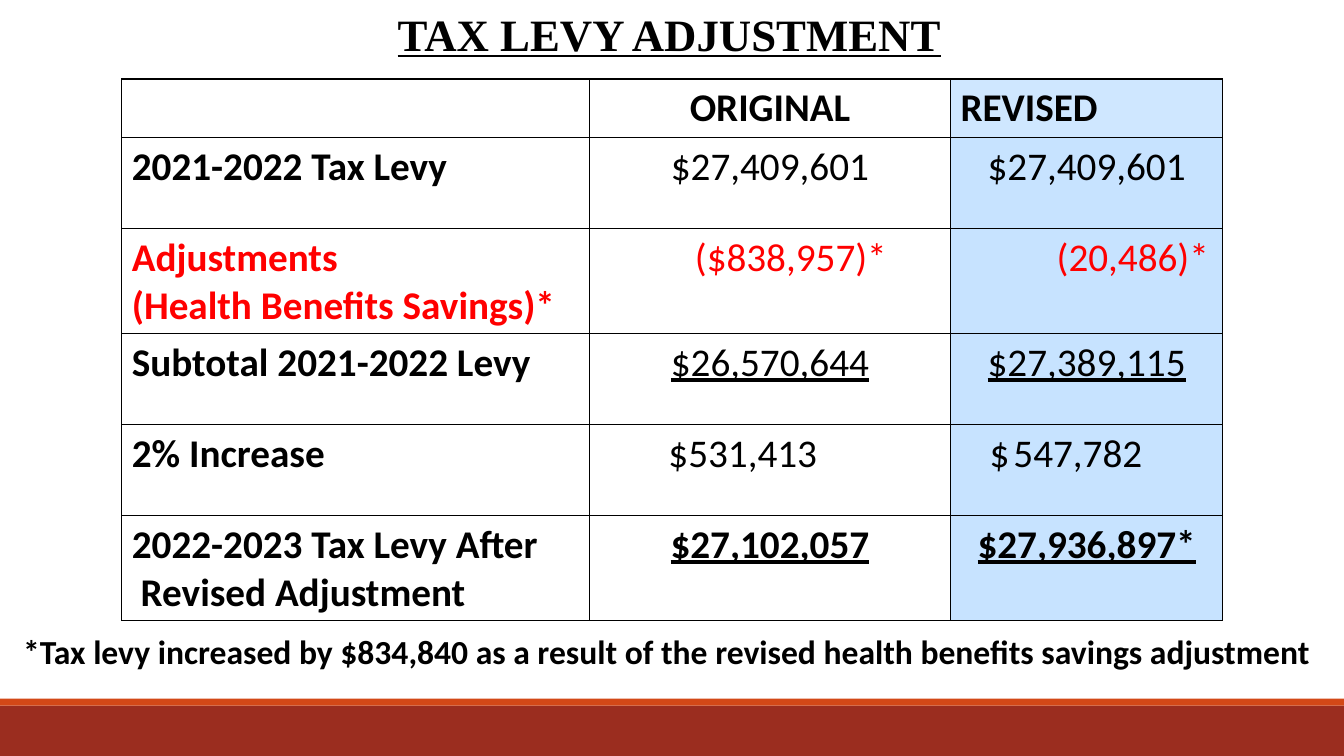
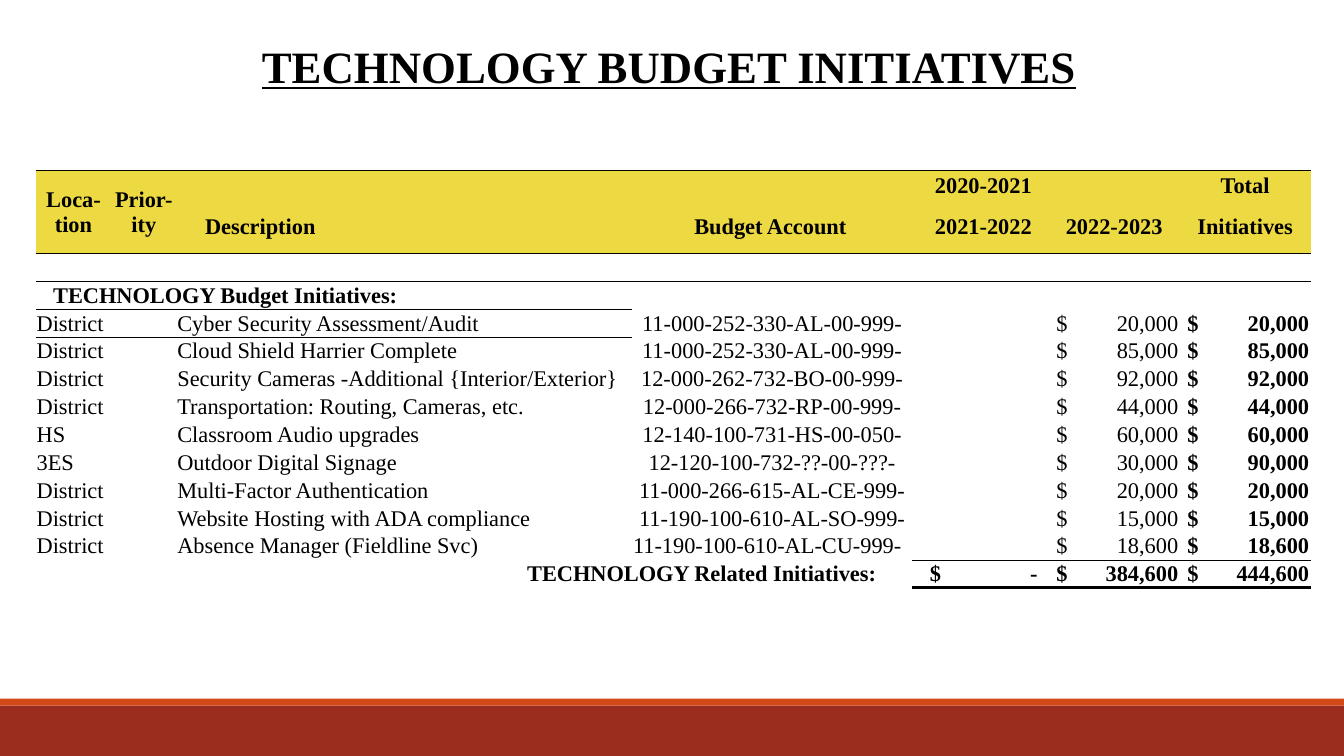
from lxml.etree import SubElement
from pptx import Presentation
from pptx.dml.color import RGBColor
from pptx.enum.shapes import MSO_SHAPE
from pptx.enum.text import MSO_ANCHOR, PP_ALIGN
from pptx.oxml.ns import qn
from pptx.util import Pt

COLORS = {
    "black": "000000", "red": "FF0000", "blue": "3399FF", "yellow": "EDD941",
    "band": "9B2D1F", "stripe": "D34817",
}
SERIF, SANS = "Times New Roman", "Calibri"
NO_STYLE = "{2D5ABB26-0587-4C30-8999-92F81FD0307C}"
ALIGN = {"l": PP_ALIGN.LEFT, "c": PP_ALIGN.CENTER, "r": PP_ALIGN.RIGHT}
ANCHOR = {"t": MSO_ANCHOR.TOP, "m": MSO_ANCHOR.MIDDLE, "b": MSO_ANCHOR.BOTTOM}


def put(box, text, size=16, font=SERIF, bold=False, underline=False,
        color="black", align="l", tab=None):
    """Write text, one paragraph a line, with an optional right tab stop."""
    tf = box.text_frame
    for i, line in enumerate(text.split("\n")):
        p = tf.add_paragraph() if i else tf.paragraphs[0]
        p.alignment = ALIGN[align]
        if tab:
            tabs = SubElement(p._p.get_or_add_pPr(), qn("a:tabLst"))
            SubElement(tabs, qn("a:tab"), pos=str(Pt(tab)), algn="r")
        if not line:
            SubElement(p._p, qn("a:endParaRPr"), sz=str(size * 100))
            continue
        r = p.add_run()
        r.text = line
        r.font.size, r.font.name = Pt(size), font
        r.font.bold, r.font.underline = bold, underline
        r.font.color.rgb = RGBColor.from_string(COLORS[color])


# Tax levy cells: (row, column) -> text and format
levy = {(0, 1): ("ORIGINAL", dict(bold=True, align="c")),
        (0, 2): ("REVISED", dict(bold=True))}
levy_labels = ["2021-2022 Tax Levy", "Adjustments\n(Health Benefits Savings)*",
               "Subtotal 2021-2022 Levy", "2% Increase",
               "2022-2023 Tax Levy After\n Revised Adjustment"]
levy_amounts = [
    ("$27,409,601", "$27,409,601", dict(align="c")),
    ("($838,957)*", "(20,486)*", dict(color="red")),
    ("$26,570,644", "$27,389,115", dict(align="c", underline=True)),
    ("$\t531,413", "$\t547,782", {}),
    ("$27,102,057", "$27,936,897*", dict(align="c", underline=True, bold=True)),
]
for row, (label, (original, revised, fmt)) in enumerate(zip(levy_labels, levy_amounts), 1):
    levy[row, 0] = (label, dict(bold=True, color=fmt.get("color", "black")))
    levy[row, 1] = (original, dict(fmt))
    levy[row, 2] = (revised, dict(fmt))
levy[2, 1][1].update(align="c", left=37)
levy[2, 2][1].update(align="r", right=10)
levy[4, 1][1].update(left=56.5, tab=87)
levy[4, 2][1].update(left=28, tab=109)

# Technology cells
head = dict(bold=True, align="c")
tech = {
    (0, 0): ("Loca-tion", head), (0, 1): ("Prior-ity", head),
    (0, 5): ("2020-2021", dict(head, anchor="b")),
    (0, 7): ("Total", dict(head, anchor="b")),
    (1, 2): ("Description", dict(bold=True, left=20.5)),
    (1, 3): ("Budget Account", dict(bold=True, left=44.5)),
    (1, 5): ("2021-2022", head), (1, 6): ("2022-2023", head),
    (1, 7): ("Initiatives", head),
    (3, 0): ("TECHNOLOGY Budget Initiatives:", dict(bold=True, left=12.5)),
    (13, 2): ("TECHNOLOGY Related Initiatives:", dict(bold=True, align="r", right=25.5)),
    (13, 5): ("$\t-", dict(bold=True, left=8.5, tab=77)),
}
money = dict(left=5.5, tab=87)
initiatives = [
    ("District", "Cyber Security Assessment/Audit", "11-000-252-330-AL-00-999-", "20,000", "20,000"),
    ("District", "Cloud Shield Harrier Complete", "11-000-252-330-AL-00-999-", "85,000", "85,000"),
    ("District", "Security Cameras -Additional {Interior/Exterior}", "12-000-262-732-BO-00-999-",
     "92,000", "92,000"),
    ("District", "Transportation: Routing, Cameras, etc.", "12-000-266-732-RP-00-999-",
     "44,000", "44,000"),
    ("HS", "Classroom Audio upgrades", "12-140-100-731-HS-00-050-", "60,000", "60,000"),
    ("3ES", "Outdoor Digital Signage", "12-120-100-732-??-00-???-", "30,000", "90,000"),
    ("District", "Multi-Factor Authentication", "11-000-266-615-AL-CE-999-", "20,000", "20,000"),
    ("District", "Website Hosting with ADA compliance", "11-190-100-610-AL-SO-999-",
     "15,000", "15,000"),
    ("District", "Absence Manager (Fieldline Svc)", "11-190-100-610-AL-CU-999-",
     "18,600", "18,600"),
]
for row, (place, name, account, cost, total) in enumerate(initiatives, 4):
    tech[row, 0] = (place, {})
    tech[row, 2] = (name, {})
    tech[row, 3] = (account, dict(align="l" if row == 12 else "c"))
    tech[row, 6] = ("$\t" + cost, money)
    tech[row, 7] = ("$\t" + total, dict(money, bold=True))
for col, total in ((6, "384,600"), (7, "444,600")):
    tech[13, col] = ("$\t" + total, dict(money, bold=True))

# Fills: (row, column) -> colour and opacity in percent
levy_fills = {(row, 2): ("blue", 27 if row else 23) for row in range(6)}
tech_fills = {(row, col): ("yellow", 100) for row in range(2) for col in range(8)}

# Pages; a rule is (grid line, first column, end column, width)
pages = [
    dict(title="TAX LEVY ADJUSTMENT", title_box=(277, 1, 410, 46),
         at=(87, 56.5), cols=[334, 258, 194.5], rows=[42, 65, 75, 65, 65, 75],
         base=dict(size=28, font=SANS), pad=(7.2, 3.6, 3.6), anchor="t",
         cells=levy, fills=levy_fills, merges=[], grid=True,
         rules=[(line, 0, 3, 1) for line in range(7)]),
    dict(title="TECHNOLOGY BUDGET INITIATIVES", title_box=(180, 24, 604, 46),
         at=(25.5, 122), cols=[54, 46.5, 325.5, 200, 3, 93.5, 93.5, 93.5],
         rows=[19.7, 38.8] + [19.7] * 12,
         base=dict(size=16, font=SERIF), pad=(0.7, 0.7, 0), anchor="m",
         cells=tech, fills=tech_fills, grid=False,
         merges=[((0, 0), (1, 0)), ((0, 1), (1, 1)), ((3, 0), (3, 2)), ((13, 2), (13, 3))],
         rules=[(0, 0, 8, 1), (2, 0, 8, 1), (3, 0, 3, 0.5), (4, 0, 3, 0.5),
                (13, 4, 8, 0.5), (14, 4, 8, 2)]),
]

prs = Presentation()
prs.slide_width, prs.slide_height = Pt(960), Pt(540)

for page in pages:
    s = prs.slides.add_slide(prs.slide_layouts[6])

    # Bottom bands
    for color, top, height in (("band", 504, 36), ("stripe", 499, 5)):
        sp = s.shapes.add_shape(MSO_SHAPE.RECTANGLE, 0, Pt(top), prs.slide_width, Pt(height))
        sp.shadow.inherit = False
        sp.fill.solid()
        sp.fill.fore_color.rgb = RGBColor.from_string(COLORS[color])
        sp.line.fill.background()

    # Title
    sp = s.shapes.add_textbox(*map(Pt, page["title_box"]))
    sp.text_frame.word_wrap = True
    put(sp, page["title"], size=32, bold=True, underline=True)

    # Table
    cols, rows = page["cols"], page["rows"]
    table = s.shapes.add_table(len(rows), len(cols), *map(Pt, page["at"]),
                               Pt(sum(cols)), Pt(sum(rows))).table
    table.first_row = table.horz_banding = False
    table._tbl.tblPr.find(qn("a:tableStyleId")).text = NO_STYLE
    for col, width in enumerate(cols):
        table.columns[col].width = Pt(width)
    for row, height in enumerate(rows):
        table.rows[row].height = Pt(height)
    for first, last in page["merges"]:
        table.cell(*first).merge(table.cell(*last))

    side, top, bottom = page["pad"]
    for row in range(len(rows)):
        for col in range(len(cols)):
            c = table.cell(row, col)

            # Text
            text, fmt = page["cells"].get((row, col), ("", {}))
            fmt = {**page["base"], **fmt}
            c.margin_left, c.margin_right = Pt(fmt.pop("left", side)), Pt(fmt.pop("right", side))
            c.margin_top, c.margin_bottom = Pt(top), Pt(bottom)
            c.vertical_anchor = ANCHOR[fmt.pop("anchor", page["anchor"])]
            put(c, text, **fmt)

            # Fill
            tcPr = c._tc.get_or_add_tcPr()
            if (row, col) in page["fills"]:
                color, opacity = page["fills"][row, col]
                c.fill.solid()
                c.fill.fore_color.rgb = RGBColor.from_string(COLORS[color])
                if opacity < 100:
                    rgb = tcPr.find(qn("a:solidFill")).find(qn("a:srgbClr"))
                    SubElement(rgb, qn("a:alpha"), val=str(opacity * 1000))
            else:
                c.fill.background()

            # Borders, which stand before the fill
            edges = {"L": 1, "R": 1} if page["grid"] else {}
            for line, start, end, width in page["rules"]:
                if start <= col < end and line in (row, row + 1):
                    edges["T" if line == row else "B"] = width
            present = [e for e in "LRTB" if e in edges]
            for i, edge in enumerate(present):
                ln = SubElement(tcPr, qn("a:ln" + edge), w=str(Pt(edges[edge])))
                SubElement(SubElement(ln, qn("a:solidFill")), qn("a:srgbClr"), val=COLORS["black"])
                tcPr.insert(i, ln)

# Footnote under the tax levy table
sp = prs.slides[0].shapes.add_textbox(Pt(9.5), Pt(447), Pt(941), Pt(36))
sp.text_frame.word_wrap = True
put(sp, "*Tax levy increased by $834,840 as a result of the revised health benefits savings adjustment",
    size=24, font=SANS, bold=True)

prs.save("out.pptx")
